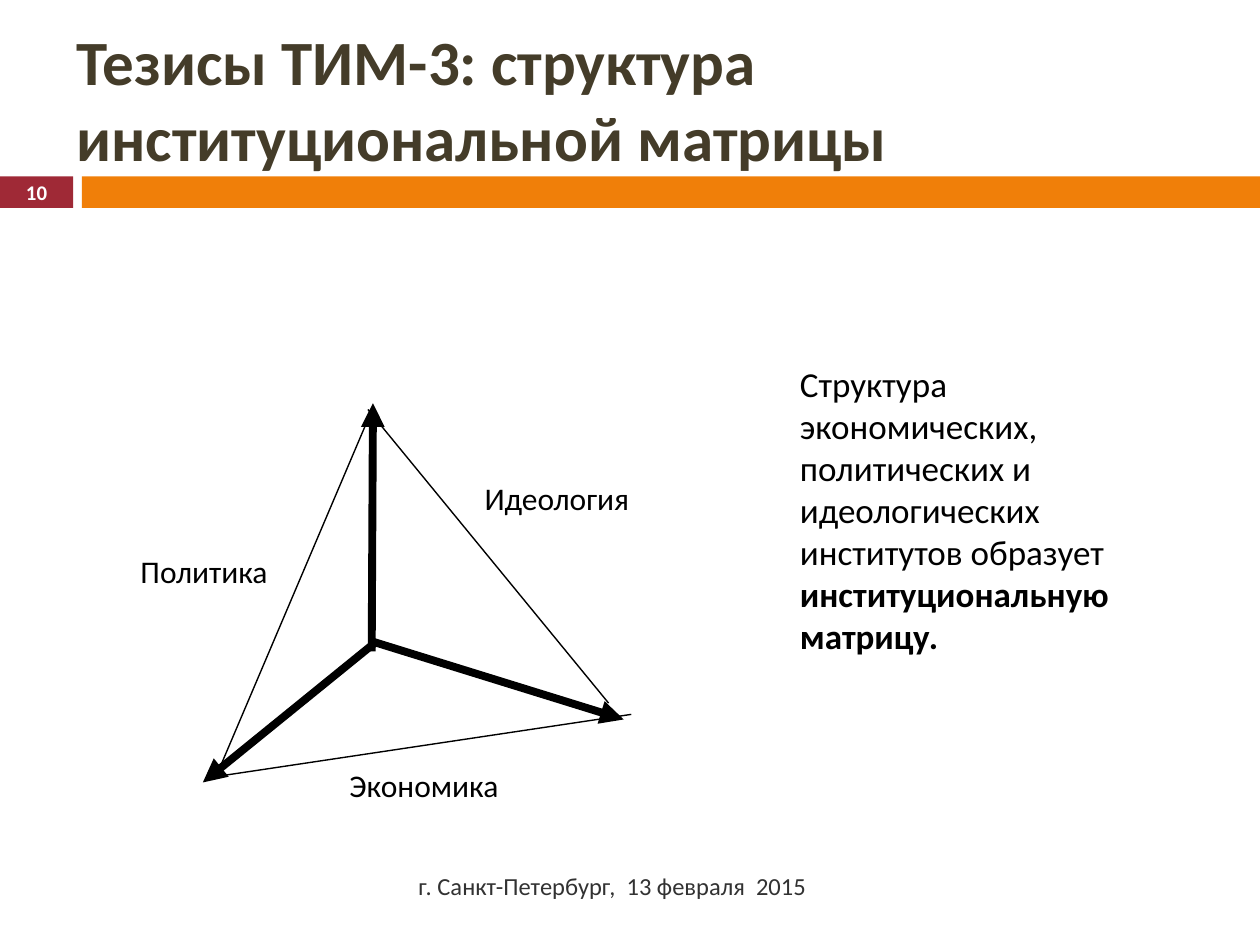
from dataclasses import dataclass

from lxml.etree import SubElement
from pptx import Presentation
from pptx.dml.color import RGBColor
from pptx.enum.shapes import MSO_CONNECTOR, MSO_SHAPE
from pptx.enum.text import MSO_ANCHOR, PP_ALIGN
from pptx.oxml.ns import qn
from pptx.util import Inches, Pt


@dataclass(frozen=True)
class Theme:
    """Colours, type sizes and line widths of the slide."""

    font: str = "Calibri"
    ink: str = "000000"
    heading: str = "443C29"
    muted: str = "323232"
    white: str = "FFFFFF"
    number_band: str = "9F2936"
    title_band: str = "F07F09"
    heading_size: float = 36
    body_size: float = 20
    label_size: float = 18
    footer_size: float = 14
    number_size: float = 11.9
    axis_width: float = 4.5
    edge_width: float = 0.79


THEME = Theme()


def style_run(run, size, color, bold=False):
    """Set the font of one run."""
    run.font.name = THEME.font
    run.font.size = Pt(size)
    run.font.bold = bold
    run.font.color.rgb = RGBColor.from_string(color)


def add_text(slide, box, text, size, color=THEME.ink, bold=False,
             align=PP_ALIGN.LEFT, anchor=MSO_ANCHOR.TOP):
    """Add a wrapped one-paragraph text box and return its frame."""
    frame = slide.shapes.add_textbox(*map(Inches, box)).text_frame
    frame.word_wrap = True
    frame.vertical_anchor = anchor
    paragraph = frame.paragraphs[0]
    paragraph.text = text
    paragraph.alignment = align
    style_run(paragraph.runs[0], size, color, bold)
    return frame


def add_band(slide, box, color):
    """Add a plain filled rectangle."""
    band = slide.shapes.add_shape(MSO_SHAPE.RECTANGLE, *map(Inches, box))
    band.shadow.inherit = False
    band.fill.solid()
    band.fill.fore_color.rgb = RGBColor.from_string(color)
    band.line.fill.background()


def add_line(slide, start, end, width, arrow=False):
    """Add a straight line, with an arrowhead at its end if asked."""
    line = slide.shapes.add_connector(
        MSO_CONNECTOR.STRAIGHT, *map(Inches, (*start, *end)))
    line.line.color.rgb = RGBColor.from_string(THEME.ink)
    line.line.width = Pt(width)
    if arrow:
        SubElement(line.line._get_or_add_ln(), qn("a:tailEnd"), type="triangle")
    SubElement(line._element.spPr, qn("a:effectLst"))


def add_header(slide, box, title, number):
    """Place the title above the numbered band."""
    left, top, width, height = box
    number_width, gap, band_height = 0.58, 0.07, 0.25
    band_top = top + height - band_height
    title_left = left + number_width + gap
    number_box = (left, band_top, number_width, band_height)
    add_band(slide, number_box, THEME.number_band)
    add_band(slide, (title_left, band_top, left + width - title_left, band_height),
             THEME.title_band)
    add_text(slide, number_box, number, THEME.number_size, THEME.white, True,
             PP_ALIGN.CENTER, MSO_ANCHOR.MIDDLE)
    add_text(slide, (left + 0.51, top + 0.13, 9.06, 1.31), title,
             THEME.heading_size, THEME.heading, True)


def add_matrix(slide, box):
    """Draw the three axes, the triangle around them and the face labels."""
    left, top, _, _ = box

    def at(point):
        """Shift a point into the box."""
        return left + point[0], top + point[1]

    axes = [
        ((2.2, 1.97), (2.21, 0)),
        ((2.24, 1.89), (0.86, 3.01)),
        ((2.2, 1.89), (4.2, 2.51)),
    ]
    edges = [
        ((2.17, 0.13), (1, 2.88)),
        ((2.17, 0.05), (4.08, 2.38)),
        ((0.92, 2.97), (4.26, 2.47)),
    ]
    labels = [
        ("Экономика", (1.42, 2.83), (2.39, 0.47)),
        ("Политика", (0, 1.13), (1.74, 0.4)),
        ("Идеология", (2.97, 0.55), (1.4, 0.4)),
    ]
    for start, end in axes:
        add_line(slide, at(start), at(end), THEME.axis_width, arrow=True)
    for start, end in edges:
        add_line(slide, at(start), at(end), THEME.edge_width)
    for label, corner, size in labels:
        add_text(slide, (*at(corner), *size), label, THEME.label_size,
                 align=PP_ALIGN.CENTER)


def add_thesis(slide, box, statement, term):
    """Place the statement with its key term in bold."""
    frame = add_text(slide, box, statement, THEME.body_size)
    term_run = frame.paragraphs[0].add_run()
    term_run.text = term
    style_run(term_run, THEME.body_size, THEME.ink, True)


def add_footer(slide, box, text):
    """Place the right-aligned place and date."""
    frame = add_text(slide, box, text, THEME.footer_size, THEME.muted,
                     align=PP_ALIGN.RIGHT, anchor=MSO_ANCHOR.MIDDLE)
    frame.margin_right = Inches(0.2)


def main():
    """Build the slide and save it."""
    presentation = Presentation()
    presentation.slide_width = Inches(10)
    presentation.slide_height = Inches(7.5)
    slide = presentation.slides.add_slide(presentation.slide_layouts[6])
    add_header(slide, (0, 0, 10, 1.65),
               "Тезисы ТИМ-3: структура институциональной матрицы", "10")
    add_matrix(slide, (0.75, 3.2, 4.59, 3.3))
    add_thesis(slide, (6.25, 2.83, 3.25, 2.46),
               "Структура экономических, политических и идеологических "
               "институтов образует ", "институциональную матрицу.")
    add_footer(slide, (0.67, 6.83, 5.93, 0.4),
               "г. Санкт-Петербург,  13 февраля  2015")
    presentation.save("out.pptx")


if __name__ == "__main__":
    main()
